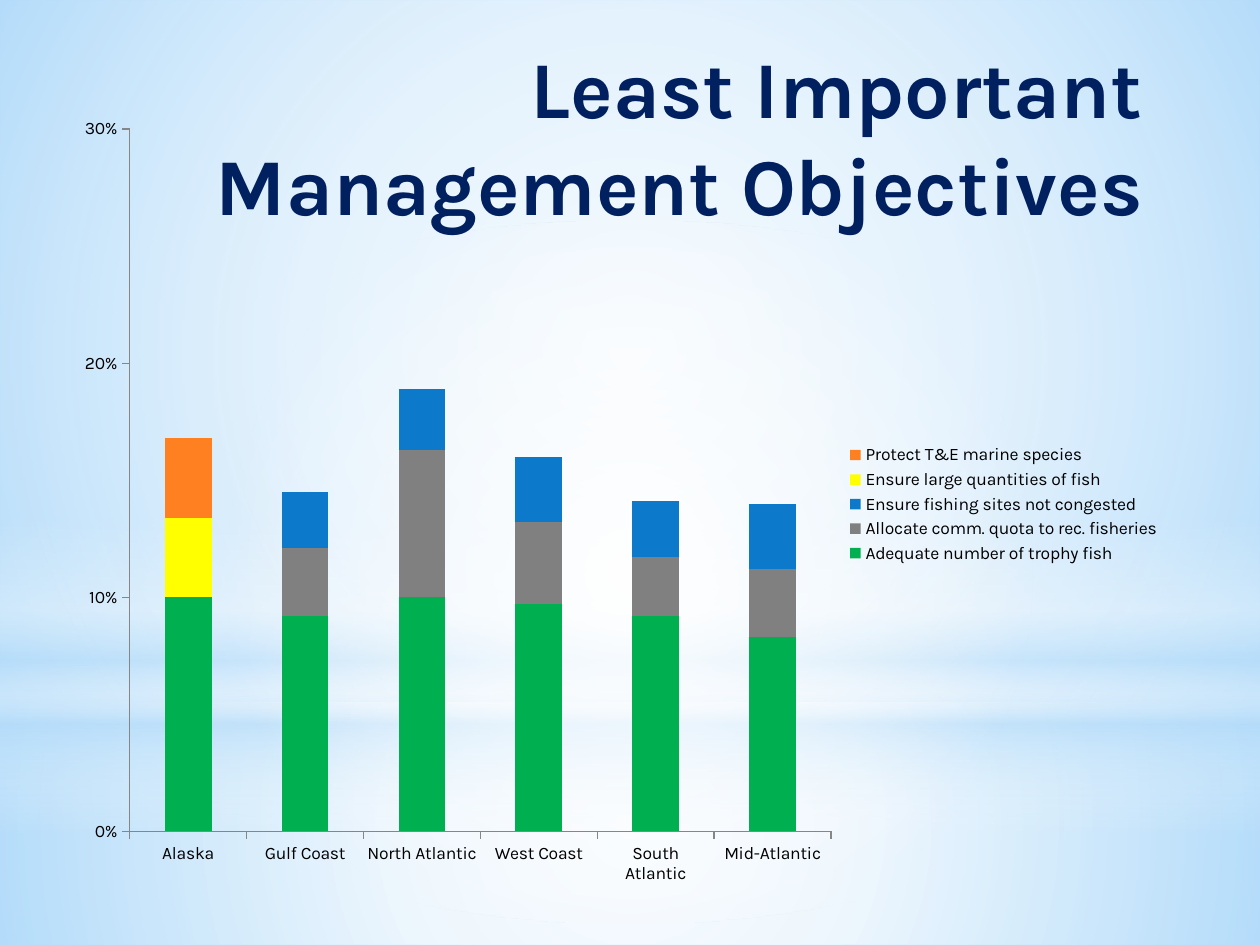
from lxml import etree
from pptx import Presentation
from pptx.chart.data import CategoryChartData
from pptx.dml.color import RGBColor
from pptx.enum.chart import XL_CHART_TYPE, XL_LEGEND_POSITION, XL_TICK_MARK
from pptx.enum.shapes import MSO_SHAPE
from pptx.enum.text import MSO_ANCHOR, PP_ALIGN
from pptx.oxml import parse_xml
from pptx.oxml.ns import nsdecls, qn
from pptx.util import Cm, Pt

RECT, OVAL = MSO_SHAPE.RECTANGLE, MSO_SHAPE.OVAL
STACKED = XL_CHART_TYPE.COLUMN_STACKED
RIGHT = XL_LEGEND_POSITION.RIGHT
TICK_OUT, TICK_NONE = XL_TICK_MARK.OUTSIDE, XL_TICK_MARK.NONE

FONT = "Karla"
SKY = RGBColor(0xB4, 0xDC, 0xFA)
WHITE = RGBColor(0xFF, 0xFF, 0xFF)
NAVY = RGBColor(0x00, 0x20, 0x60)
BLACK = RGBColor(0x00, 0x00, 0x00)
AXIS = RGBColor(0x86, 0x86, 0x86)
GREEN = RGBColor(0x00, 0xB0, 0x50)
GRAY = RGBColor(0x80, 0x80, 0x80)
BLUE = RGBColor(0x0D, 0x79, 0xCA)
YELLOW = RGBColor(0xFF, 0xFF, 0x00)
ORANGE = RGBColor(0xFF, 0x80, 0x21)

RADIAL = ('<a:path path="circle"><a:fillToRect l="50000" t="50000" '
          'r="50000" b="50000"/></a:path>')
LINEAR = '<a:lin ang="5400000" scaled="0"/>'

# Shape, box in cm, gradient direction, stops of (position %, colour, opacity %)
GLOWS = [
    (RECT, (0, 14.17, 25.4, 4.88), RADIAL,
     [(0, WHITE, 91), (37, WHITE, 76), (100, SKY, 79)]),
    (RECT, (0, 0, 25.4, 14.17), RADIAL,
     [(0, WHITE, 89), (48, WHITE, 62), (100, SKY, 79)]),
    (RECT, (0, 10.46, 25.4, 6.35), LINEAR,
     [(0, WHITE, 0), (29, WHITE, 30), (45, SKY, 40),
      (55, WHITE, 26), (65, SKY, 60), (100, WHITE, 0)]),
    (OVAL, (0, 4.45, 25.4, 14.17), RADIAL,
     [(0, WHITE, 100), (56, WHITE, 0)]),
]

REGIONS = ["Alaska", "Gulf Coast", "North Atlantic", "West Coast",
           "South Atlantic", "Mid-Atlantic"]
GOALS = [
    ("Adequate number of trophy fish", GREEN,
     [0.1, 0.092, 0.1, 0.097, 0.092, 0.083]),
    ("Allocate comm. quota to rec. fisheries", GRAY,
     [None, 0.029, 0.063, 0.035, 0.025, 0.029]),
    ("Ensure fishing sites not congested", BLUE,
     [None, 0.024, 0.026, 0.028, 0.024, 0.028]),
    ("Ensure large quantities of fish", YELLOW, [0.034] + [None] * 5),
    ("Protect T&E marine species", ORANGE, [0.034] + [None] * 5),
]


def add_glow(slide, kind, box, course, stops):
    glow = slide.shapes.add_shape(kind, *map(Cm, box))
    glow.shadow.inherit = False
    glow.line.fill.background()
    glow.fill.background()
    marks = "".join(
        f'<a:gs pos="{pos * 1000}"><a:srgbClr val="{color}">'
        f'<a:alpha val="{alpha * 1000}"/></a:srgbClr></a:gs>'
        for pos, color, alpha in stops)
    props = glow.element.spPr
    props.replace(props.find(qn("a:noFill")), parse_xml(
        f'<a:gradFill {nsdecls("a")} rotWithShape="1">'
        f'<a:gsLst>{marks}</a:gsLst>{course}</a:gradFill>'))


def add_backdrop(slide):
    fill = slide.background.fill
    fill.solid()
    fill.fore_color.rgb = SKY
    for glow in GLOWS:
        add_glow(slide, *glow)


def add_title(slide, box):
    frame = slide.shapes.add_textbox(*map(Cm, box)).text_frame
    frame.word_wrap = True
    frame.vertical_anchor = MSO_ANCHOR.TOP
    para = frame.paragraphs[0]
    para.text = "Least Important Management Objectives"
    para.alignment = PP_ALIGN.RIGHT
    font = para.font
    font.name, font.size, font.bold = FONT, Pt(46), True
    font.color.rgb = NAVY


def set_layout(part, inner, **place):
    """Fix a chart part at fractions x, y, w, h of the chart's box."""
    layout = part.find(qn("c:layout"))
    if layout is None:
        layout = etree.Element(qn("c:layout"))
        part.insert(1 if part.tag == qn("c:legend") else 0, layout)
    for child in list(layout):
        layout.remove(child)
    manual = etree.SubElement(layout, qn("c:manualLayout"))
    rules = {"layoutTarget": "inner"} if inner else {}
    rules.update(xMode="edge", yMode="edge", **place)
    for name, value in rules.items():
        etree.SubElement(manual, qn(f"c:{name}")).set("val", str(value))


def style_axis(axis):
    axis.has_major_gridlines = False
    axis.major_tick_mark = TICK_OUT
    axis.minor_tick_mark = TICK_NONE
    axis.format.line.color.rgb = AXIS
    axis.format.line.width = Pt(0.75)


def add_goals(slide, box):
    data = CategoryChartData(number_format="0%")
    data.categories = REGIONS
    for name, _, shares in GOALS:
        data.add_series(name, shares)
    chart = slide.shapes.add_chart(STACKED, *map(Cm, box), data).chart
    chart.has_title = False
    chart.font.name, chart.font.size = FONT, Pt(10)
    chart.font.color.rgb = BLACK

    plot = chart.plots[0]
    plot.gap_width, plot.overlap = 150, 100
    plot.vary_by_categories = False
    for series, (_, color, _) in zip(plot.series, GOALS):
        series.format.fill.solid()
        series.format.fill.fore_color.rgb = color

    style_axis(chart.category_axis)
    scale = chart.value_axis
    style_axis(scale)
    scale.minimum_scale, scale.maximum_scale = 0, 0.3
    scale.major_unit = 0.1
    scale.tick_labels.number_format = "0%"
    scale.tick_labels.number_format_is_linked = False

    chart.has_legend = True
    legend = chart.legend
    legend.position, legend.include_in_layout = RIGHT, False
    area = chart.element.chart
    set_layout(area.plotArea, True, x=0.06, y=0.03, w=0.63, h=0.88)
    set_layout(area.find(qn("c:legend")), False, x=0.7, y=0.42, w=0.29, h=0.16)


def main():
    deck = Presentation()
    deck.slide_width, deck.slide_height = Cm(25.4), Cm(19.05)
    slide = deck.slides.add_slide(deck.slide_layouts[6])
    add_backdrop(slide)
    add_title(slide, (1.48, 0.64, 21.8, 3.18))
    add_goals(slide, (1.27, 2.12, 22.44, 16.09))
    deck.save("out.pptx")


if __name__ == "__main__":
    main()
